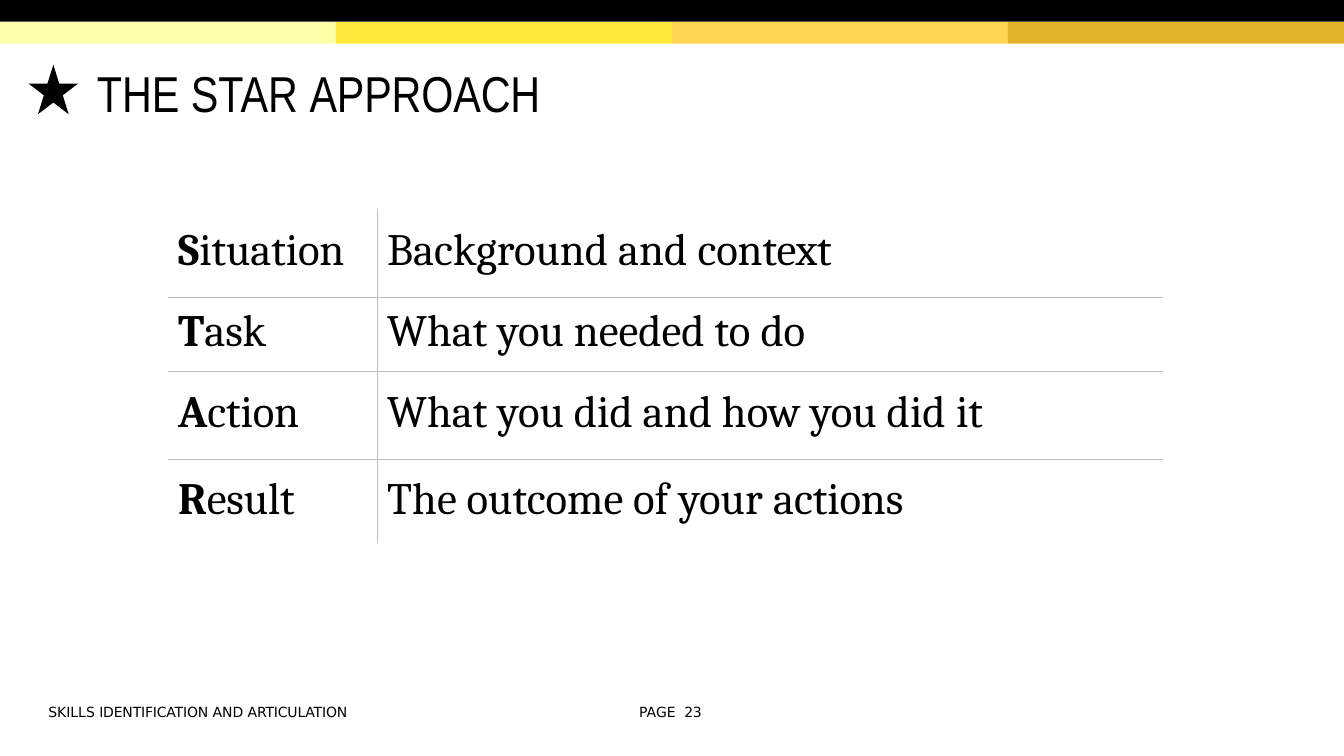
from dataclasses import dataclass

from lxml.etree import SubElement
from pptx import Presentation
from pptx.dml.color import RGBColor
from pptx.enum.shapes import MSO_SHAPE
from pptx.enum.text import MSO_ANCHOR, PP_ALIGN
from pptx.oxml.ns import qn
from pptx.util import Cm, Pt


@dataclass(frozen=True)
class Theme:
    ink: str = "000000"
    paper: str = "FFFFFF"
    rule: str = "BEBEBE"
    bands: tuple = ("FFFFAA", "FFEA3C", "FFD44F", "E3B429")
    title_font: str = "Arial Narrow"
    table_font: str = "Cambria"
    footer_font: str = "DejaVu Sans"
    title_size: int = 36
    table_size: int = 32
    footer_size: int = 10


class SlideBuilder:
    def __init__(self, slide, theme):
        self.slide = slide
        self.theme = theme

    def add_block(self, kind, left, top, width, height, color):
        shape = self.slide.shapes.add_shape(kind, Cm(left), Cm(top), Cm(width), Cm(height))
        shape.shadow.inherit = False
        shape.fill.solid()
        shape.fill.fore_color.rgb = RGBColor.from_string(color)
        shape.line.fill.background()

    def add_runs(self, paragraph, runs, font, size, indent=0.0):
        paragraph.alignment = PP_ALIGN.LEFT
        properties = paragraph._p.get_or_add_pPr()
        properties.set("marL", str(Cm(indent)))
        properties.set("indent", "0")
        for text, spacing, bold in runs:
            run = paragraph.add_run()
            run.text = text
            run.font.name = font
            run.font.size = Pt(size)
            run.font.bold = bold
            run.font.color.rgb = RGBColor.from_string(self.theme.ink)
            run._r.get_or_add_rPr().set("spc", str(round(spacing * 100)))

    def prepare_frame(self, frame):
        frame.word_wrap = True
        frame.vertical_anchor = MSO_ANCHOR.TOP
        frame.margin_left = frame.margin_right = frame.margin_bottom = 0
        frame.margin_top = Cm(0.03)

    def add_title(self, runs, left, top, width, height, indent):
        title = self.slide.shapes.title
        title.left, title.top = Cm(left), Cm(top)
        title.width, title.height = Cm(width), Cm(height)
        self.prepare_frame(title.text_frame)
        self.add_runs(title.text_frame.paragraphs[0], runs,
                      self.theme.title_font, self.theme.title_size, indent)

    def add_footer(self, runs, left, width):
        box = self.slide.shapes.add_textbox(Cm(left), Cm(17.7), Cm(width), Cm(0.5))
        self.prepare_frame(box.text_frame)
        self.add_runs(box.text_frame.paragraphs[0], runs,
                      self.theme.footer_font, self.theme.footer_size, 0.03)

    def set_borders(self, cell, colors):
        properties = cell._tc.get_or_add_tcPr()
        for side, color in zip(("lnL", "lnR", "lnT", "lnB"), colors):
            line = SubElement(properties, qn(f"a:{side}"), w=str(Pt(1)))
            fill = SubElement(line, qn("a:solidFill"))
            SubElement(fill, qn("a:srgbClr"), val=color)

    def add_table(self, rows, left, top, widths):
        theme = self.theme
        height = sum(row[0] for row in rows)
        frame = self.slide.shapes.add_table(
            len(rows), len(widths), Cm(left), Cm(top), Cm(sum(widths)), Cm(height))
        table = frame.table
        table.first_row = table.horz_banding = False
        for column, width in zip(table.columns, widths):
            column.width = Cm(width)
        last_row, last_column = len(rows) - 1, len(widths) - 1
        for row_index, (row_height, margin, *cells) in enumerate(rows):
            table.rows[row_index].height = Cm(row_height)
            for column_index, runs in enumerate(cells):
                cell = table.cell(row_index, column_index)
                outer = (column_index == 0, column_index == last_column,
                         row_index == 0, row_index == last_row)
                self.set_borders(cell, [theme.paper if edge else theme.rule for edge in outer])
                cell.fill.background()
                cell.vertical_anchor = MSO_ANCHOR.TOP
                cell.margin_left = cell.margin_right = cell.margin_bottom = 0
                cell.margin_top = Cm(margin)
                self.add_runs(cell.text_frame.paragraphs[0], runs,
                              theme.table_font, theme.table_size, 0.25)


def main():
    theme = Theme()
    presentation = Presentation()
    presentation.slide_width = Cm(33.87)
    presentation.slide_height = Cm(19.05)
    slide = presentation.slides.add_slide(presentation.slide_layouts[5])
    builder = SlideBuilder(slide, theme)

    band_height = 0.55
    band_width = 33.87 / len(theme.bands)
    for index, color in enumerate(theme.bands):
        builder.add_block(MSO_SHAPE.RECTANGLE, index * band_width, band_height,
                          band_width, band_height, color)
    builder.add_block(MSO_SHAPE.RECTANGLE, 0, 0, 33.87, band_height, theme.ink)
    builder.add_block(MSO_SHAPE.STAR_5_POINT, 0.72, 1.63, 1.25, 1.25, theme.ink)

    builder.add_title([("THE STAR ", 0, False), ("APPROACH", -0.1, False)],
                      0.94, 1.53, 22.23, 1.6, 1.5)

    rows = [
        (2.21, 0.4, [("S", -0.1, True), ("ituation", -0.1, False)],
         [("Background and ", 0, False), ("context", -0.1, False)]),
        (1.88, 0.23, [("T", -0.2, True), ("ask", -0.2, False)],
         [("What you needed to ", 0, False), ("do", -0.2, False)]),
        (2.21, 0.39, [("A", -0.1, True), ("ction", -0.1, False)],
         [("What you did and how you did ", 0, False), ("it", -0.2, False)]),
        (2.13, 0.36, [("R", -0.1, True), ("esult", -0.1, False)],
         [("The outcome of your ", 0, False), ("actions", -0.1, False)]),
    ]
    builder.add_table(rows, 4.24, 5.28, (5.27, 19.79))

    builder.add_footer([("SKILLS ", 0, False), ("IDENTIFICATION ", -0.1, False),
                        ("AND ", 0, False), ("ARTICULATION", -0.1, False)], 1.19, 8.23)
    builder.add_footer([("PAGE", 0, False), (" ", 3, False), ("23", -0.2, False)], 16.08, 1.83)

    presentation.save("out.pptx")


if __name__ == "__main__":
    main()
